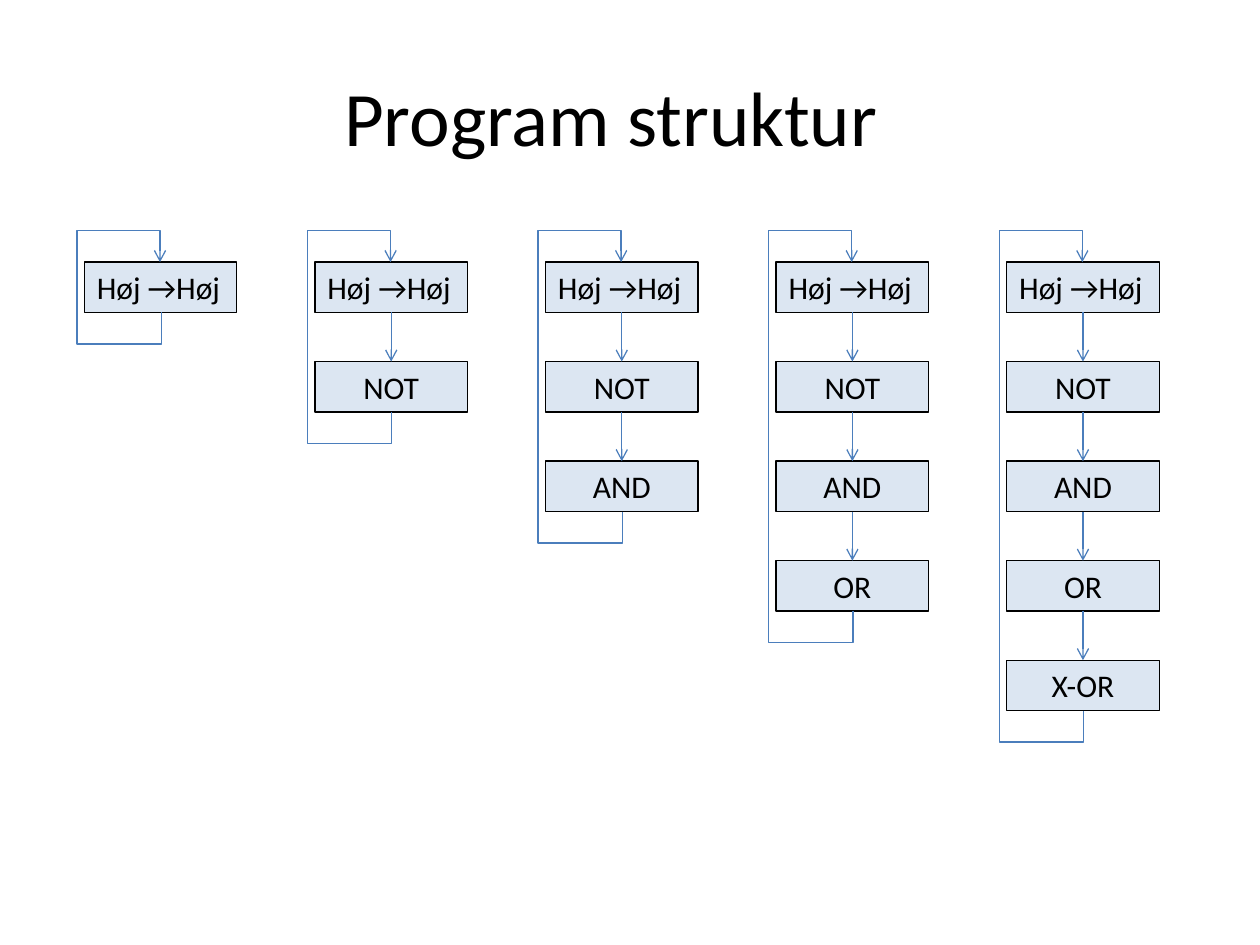
from lxml.etree import SubElement
from pptx import Presentation
from pptx.dml.color import RGBColor
from pptx.enum.shapes import MSO_CONNECTOR, MSO_SHAPE
from pptx.enum.text import MSO_ANCHOR, MSO_AUTO_SIZE, PP_ALIGN
from pptx.oxml.ns import qn
from pptx.util import Inches, Pt

COLORS = {"text": "000000", "box": "DCE6F2", "border": "000000", "arrow": "4B7EBC"}
STEPS = ["Høj →Høj", "NOT", "AND", "OR", "X-OR"]

LEFT, TOP = 0.67, 2.08
COLUMN_STEP, ROW_STEP = 1.83, 0.79
BOX_WIDTH, BOX_HEIGHT = 1.21, 0.4
LOOP_RISE = 0.25    # how far a loop runs out above and below its column
LOOP_REACH = 0.68   # from the middle of a column to the loop's long side
LOOP_OFFSET = 0.01  # sideways shift between the loop's two ends


def style_arrow(connector):
    connector.line.color.rgb = RGBColor.from_string(COLORS["arrow"])
    connector.line.width = Pt(0.75)
    SubElement(connector.line._get_or_add_ln(), qn("a:tailEnd"), type="arrow")
    SubElement(connector._element.spPr, qn("a:effectLst"))


def add_loop(shapes, middle, top, bottom):
    """Add a five-part elbow from a column's bottom around its left side to its top."""
    length = bottom - top
    center = (top + bottom) / 2
    # Laid out lying down, then turned a quarter: right becomes bottom
    loop = shapes.add_connector(
        MSO_CONNECTOR.ELBOW,
        Inches(middle + length / 2), Inches(center - LOOP_OFFSET / 2),
        Inches(middle - length / 2), Inches(center + LOOP_OFFSET / 2),
    )
    properties = loop._element.spPr
    properties.find(qn("a:xfrm")).set("rot", str(90 * 60000))
    geometry = properties.find(qn("a:prstGeom"))
    geometry.set("prst", "bentConnector5")
    guides = geometry.find(qn("a:avLst"))
    ratios = [-LOOP_RISE / length, LOOP_REACH / LOOP_OFFSET, 1 + LOOP_RISE / length]
    for number, ratio in enumerate(ratios, start=1):
        SubElement(guides, qn("a:gd"), name=f"adj{number}", fmla=f"val {round(ratio * 100000)}")
    style_arrow(loop)


deck = Presentation()
deck.slide_width, deck.slide_height = Inches(10), Inches(7.5)
page = deck.slides.add_slide(deck.slide_layouts[5])

title = page.shapes.title
title.left, title.top = Inches(0.35), Inches(0.29)
title.width, title.height = Inches(9), Inches(1.25)
title.text_frame.text = "Program struktur"
title.text_frame.vertical_anchor = MSO_ANCHOR.MIDDLE
para = title.text_frame.paragraphs[0]
para.alignment = PP_ALIGN.CENTER
para.font.name, para.font.size = "Calibri", Pt(44)
para.font.color.rgb = RGBColor.from_string(COLORS["text"])

# Each column shows the program with one more step than the column before
for column in range(len(STEPS)):
    shapes = page.shapes.add_group_shape().shapes
    left = LEFT + column * COLUMN_STEP
    previous = None
    for row, step in enumerate(STEPS[:column + 1]):
        box = shapes.add_shape(
            MSO_SHAPE.RECTANGLE, Inches(left), Inches(TOP + row * ROW_STEP),
            Inches(BOX_WIDTH), Inches(BOX_HEIGHT),
        )
        box.shadow.inherit = False
        box.fill.solid()
        box.fill.fore_color.rgb = RGBColor.from_string(COLORS["box"])
        box.line.color.rgb = RGBColor.from_string(COLORS["border"])
        box.line.width = Pt(0.75)
        frame = box.text_frame
        frame.text = step
        frame.word_wrap = row > 0
        frame.auto_size = MSO_AUTO_SIZE.SHAPE_TO_FIT_TEXT
        frame.vertical_anchor = MSO_ANCHOR.TOP
        para = frame.paragraphs[0]
        para.alignment = PP_ALIGN.CENTER if row else PP_ALIGN.LEFT
        para.font.name, para.font.size = "Calibri", Pt(18)
        para.font.color.rgb = RGBColor.from_string(COLORS["text"])
        if previous is not None:
            arrow = shapes.add_connector(MSO_CONNECTOR.STRAIGHT, 0, 0, 0, 0)
            arrow.begin_connect(previous, 2)
            arrow.end_connect(box, 0)
            style_arrow(arrow)
        previous = box
    add_loop(shapes, left + BOX_WIDTH / 2, TOP, TOP + column * ROW_STEP + BOX_HEIGHT)

deck.save("out.pptx")
